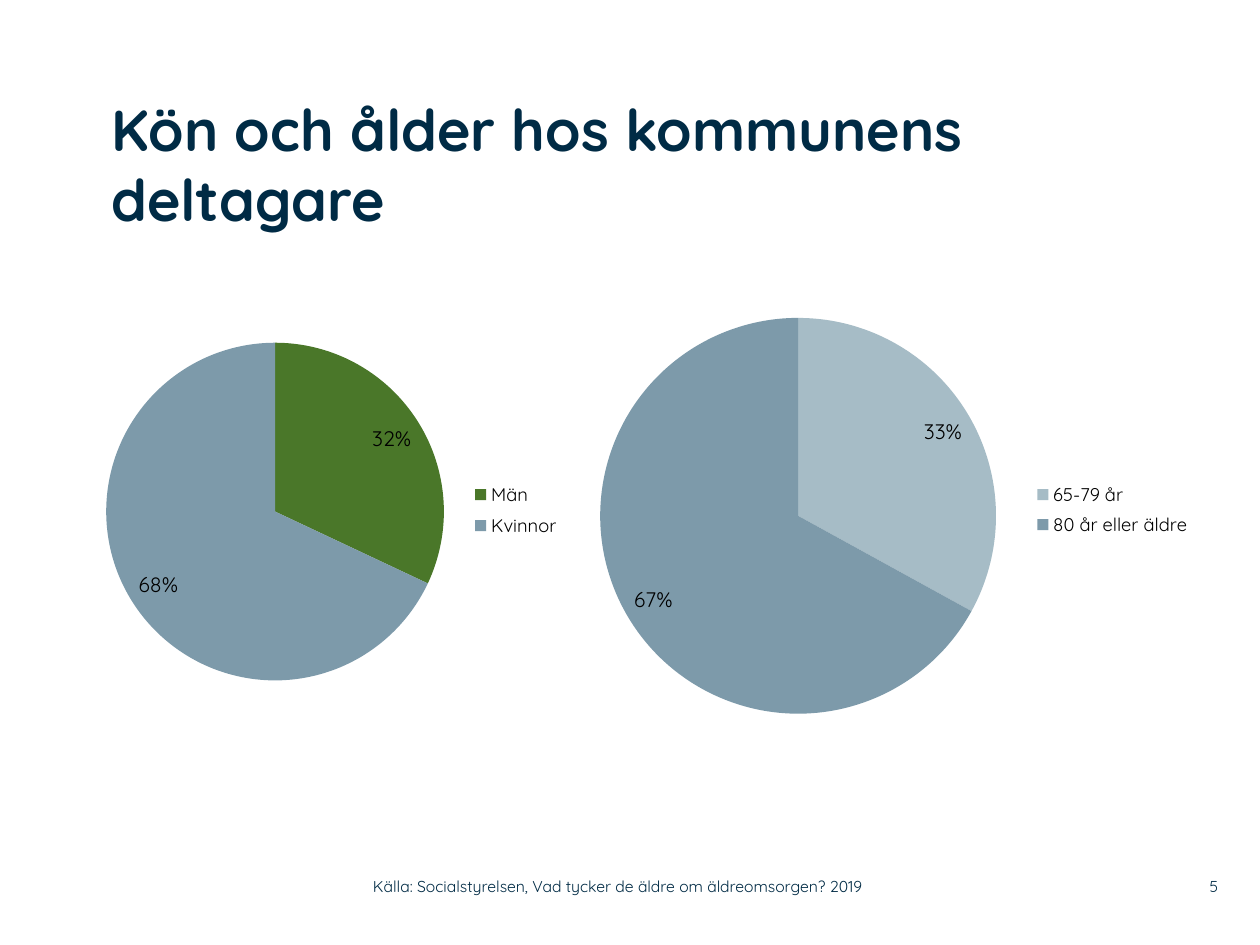
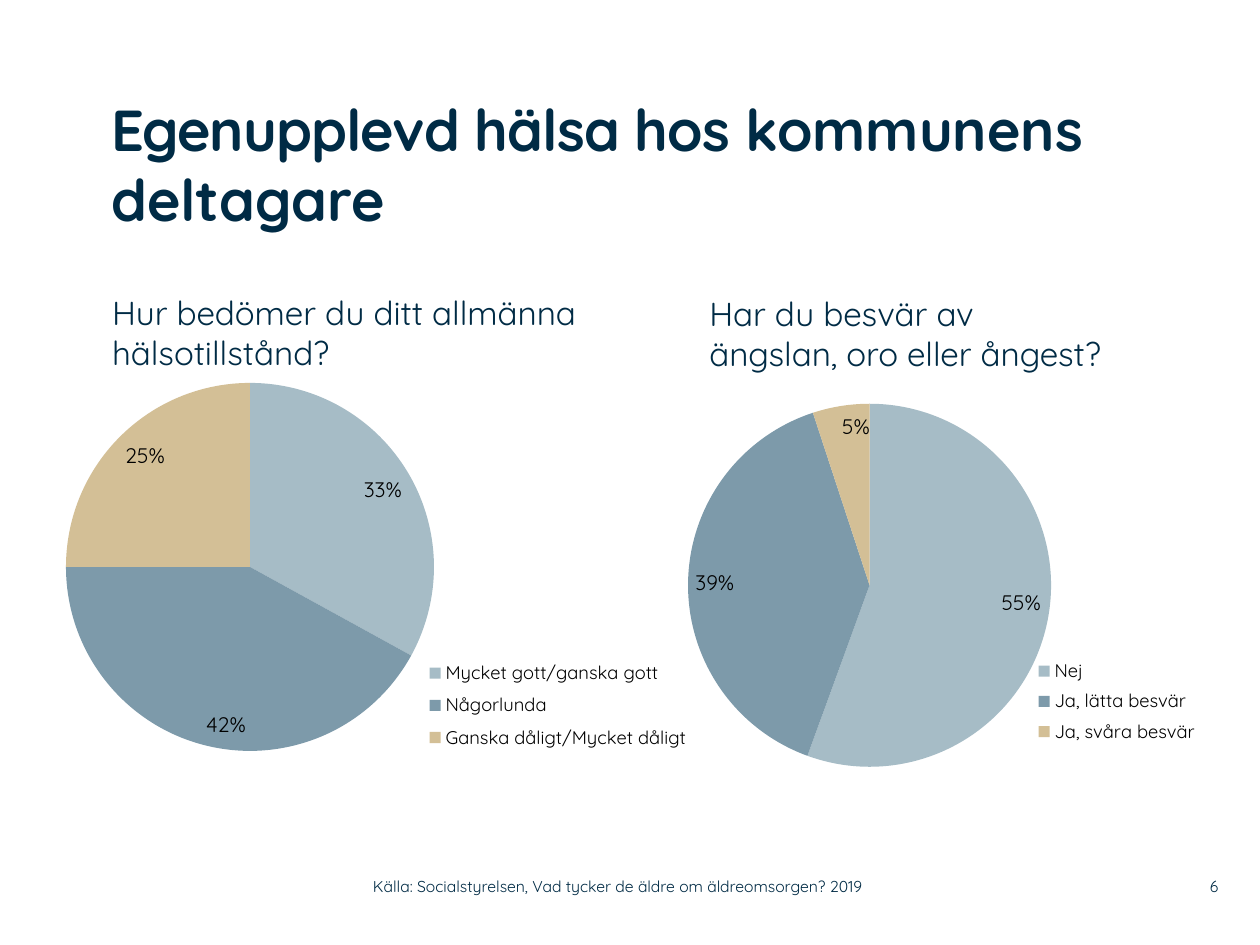
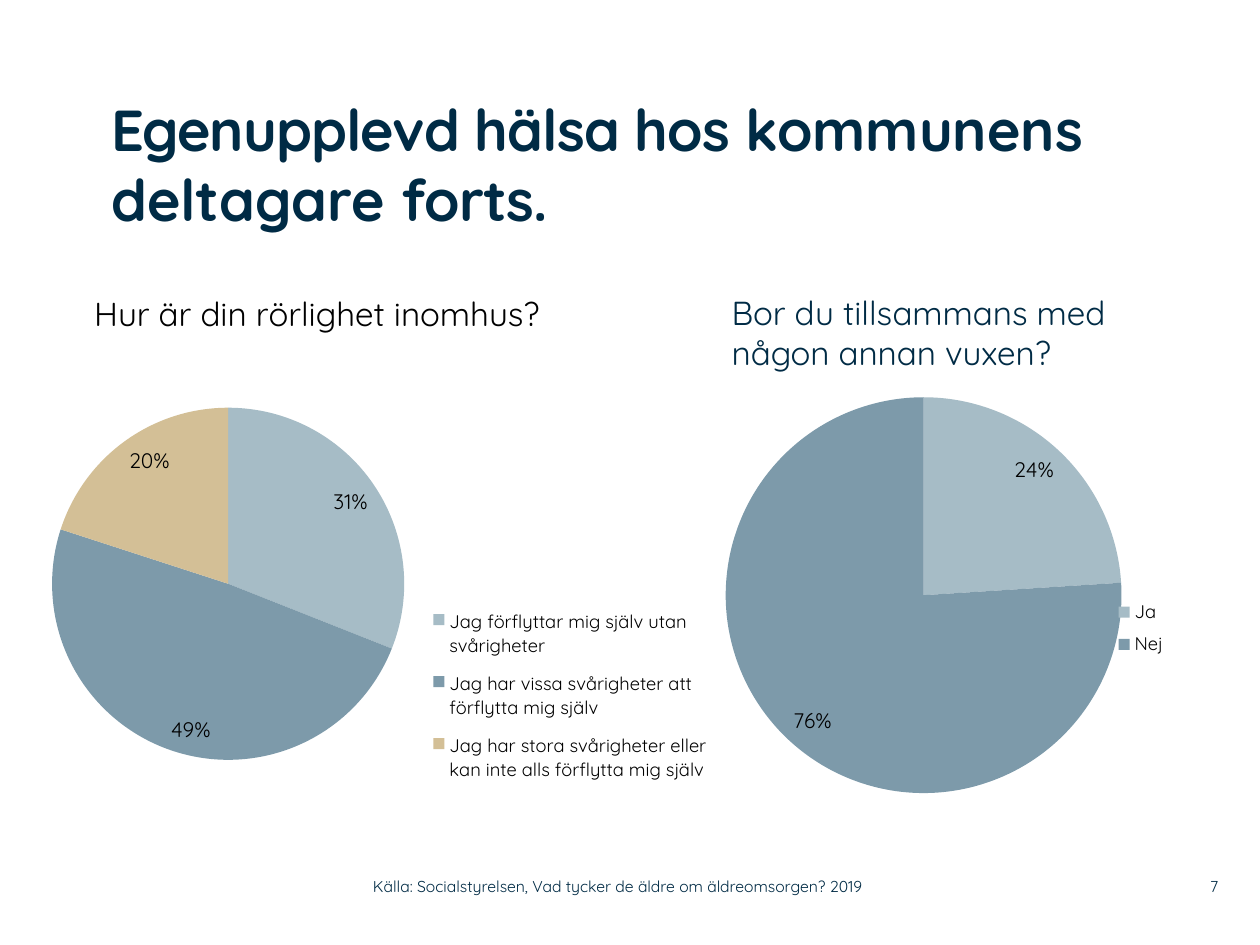
from dataclasses import dataclass

from lxml.etree import SubElement
from pptx import Presentation
from pptx.chart.data import CategoryChartData
from pptx.dml.color import RGBColor
from pptx.enum.chart import XL_CHART_TYPE as ChartType
from pptx.enum.chart import XL_LABEL_POSITION as LabelPosition
from pptx.enum.chart import XL_LEGEND_POSITION as LegendPosition
from pptx.enum.text import MSO_ANCHOR as Anchor
from pptx.enum.text import PP_ALIGN as Align
from pptx.oxml import parse_xml
from pptx.oxml.ns import nsdecls, qn
from pptx.util import Cm, Pt


@dataclass(frozen=True)
class Theme:
    """Colours, font and type sizes shared by the slides."""

    font: str = "Quicksand"
    navy: str = "002B45"
    black: str = "000000"
    green: str = "4A7729"
    pale: str = "A6BCC6"
    steel: str = "7D9AAA"
    sand: str = "D3BF96"
    title: float = 33
    caption: float = 19
    label: float = 12
    legend: float = 10.5
    chart: float = 10
    footer: float = 9


THEME = Theme()
SCALE = (THEME.pale, THEME.steel, THEME.sand)
SOURCE = "Källa: Socialstyrelsen, Vad tycker de äldre om äldreomsorgen? 2019"
SLIDE_SIZE = (25.4, 19.05)
CHART_SIZE = (13.77, 8.69)
TITLE_ORIGIN, TITLE_HEIGHT = (2.24, 1.9), 3.6
SOURCE_BOX = (7.52, 17.5, 11.25, 0.74)
NUMBER_BOX = (23.37, 17.5, 1.19, 0.74)


@dataclass(frozen=True)
class Caption:
    """A question above a pie, with its box in centimetres."""

    text: str
    box: tuple
    color: str = THEME.navy


@dataclass(frozen=True)
class Pie:
    """A pie with its frame, circle and legend, in slide centimetres."""

    origin: tuple
    circle: tuple
    legend: tuple
    shares: dict
    colors: tuple = SCALE


@dataclass(frozen=True)
class Page:
    """The content of one slide."""

    number: int
    title: tuple
    title_width: float
    pies: tuple
    captions: tuple = ()


PAGES = (
    Page(
        5, (("Kön och ålder hos kommunens deltagare", 0),), 19.3,
        pies=(
            Pie((-0.58, 5.87), (2.14, 6.91, 6.81), (9.43, 9.58, 1.94, 1.41),
                {"Män": 32, "Kvinnor": 68}, (THEME.green, THEME.steel)),
            Pie((10.95, 6.07), (12.1, 6.41, 7.98), (20.78, 9.6, 3.29, 1.35),
                {"65-79 år": 33, "80 år eller äldre": 67}),
        ),
    ),
    Page(
        6, (("Egenupplevd hälsa hos ", -50), ("kommunens deltagare", 0)), 21,
        pies=(
            Pie((0.99, 7.09), (1.33, 7.72, 7.42), (8.53, 13.16, 5.44, 2.12),
                {"Mycket gott/ganska gott": 33, "Någorlunda": 42,
                 "Ganska dåligt/Mycket dåligt": 25}),
            Pie((12.45, 7.14), (13.87, 8.14, 7.32), (20.8, 13.16, 3.43, 1.96),
                {"Nej": 55, "Ja, lätta besvär": 39, "Ja, svåra besvär": 5}),
        ),
        captions=(
            Caption("Hur bedömer du ditt allmänna hälsotillstånd?", (2.01, 5.77, 10.34, 1.88)),
            Caption("Har du besvär av \nängslan, oro eller ångest?", (14.05, 5.79, 9.42, 1.88)),
        ),
    ),
    Page(
        7,
        (("Egenupplevd hälsa hos ", -50), ("kommunens deltagare ", 0), ("forts.", -50)),
        20.37,
        pies=(
            Pie((12.42, 7.67), (14.63, 8.01, 7.98), (22.44, 11.93, 1.11, 1.47),
                {"Ja": 24, "Nej": 76}),
            Pie((0.71, 7.44), (1.05, 8.22, 7.1), (8.59, 12.01, 5.81, 4.05),
                {"Jag förflyttar mig själv utan svårigheter": 31,
                 "Jag har vissa svårigheter att förflytta mig själv": 49,
                 "Jag har stora svårigheter eller kan inte alls förflytta mig själv": 20}),
        ),
        captions=(
            Caption("Hur är din rörlighet inomhus?", (1.65, 5.79, 10.34, 1.07), THEME.black),
            Caption("Bor du tillsammans med någon annan vuxen?", (14.5, 5.77, 9.42, 1.88)),
        ),
    ),
)


def set_values(target, values):
    """Set each named attribute of the target."""
    for name, value in values.items():
        setattr(target, name, value)


def style_font(font, size, color, bold=False):
    """Give a font the theme typeface with a size and colour."""
    set_values(font, {"name": THEME.font, "size": Pt(size), "bold": bold})
    font.color.rgb = RGBColor.from_string(color)


def add_text(slide, box, size, color=THEME.navy, bold=False, align=Align.LEFT, **frame_format):
    """Add a wrapping text box and return its paragraph and a run styler."""
    shape = slide.shapes.add_textbox(*map(Cm, box))
    set_values(shape.text_frame, {"word_wrap": True, **frame_format})
    paragraph = shape.text_frame.paragraphs[0]
    paragraph.alignment = align

    def write(text, spacing=0):
        """Append styled lines with the given letter spacing."""
        for index, line in enumerate(text.split("\n")):
            if index:
                paragraph.add_line_break()
            run = paragraph.add_run()
            run.text = line
            style_font(run.font, size, color, bold)
            if spacing:
                run.font._element.set("spc", str(spacing))

    return write


def no_margins():
    """Return frame values for text without insets."""
    return {f"margin_{side}": 0 for side in ("left", "top", "right", "bottom")}


def add_title(slide, parts, box):
    """Write the title runs in the given box."""
    write = add_text(slide, box, THEME.title, bold=True, **no_margins())
    for text, spacing in parts:
        write(text, spacing)


def add_footer(slide, number):
    """Write the source line and the slide number."""
    for text, box, align in (
        (str(number), NUMBER_BOX, Align.RIGHT),
        (SOURCE, SOURCE_BOX, Align.LEFT),
    ):
        write = add_text(slide, box, THEME.footer, align=align,
                         vertical_anchor=Anchor.MIDDLE, **no_margins())
        write(text)


def place_part(part, index, origin, box, inner=False):
    """Fix a chart part at a slide box, as fractions of the chart frame."""
    for old in part.findall(qn("c:layout")):
        part.remove(old)
    layout = parse_xml(f"<c:layout {nsdecls('c')}/>")
    manual = SubElement(layout, qn("c:manualLayout"))
    left, top, width, height = box
    frame_width, frame_height = CHART_SIZE
    values = {"layoutTarget": "inner"} if inner else {}
    values |= {
        "xMode": "edge",
        "yMode": "edge",
        "x": (left - origin[0]) / frame_width,
        "y": (top - origin[1]) / frame_height,
        "w": width / frame_width,
        "h": height / frame_height,
    }
    for name, value in values.items():
        SubElement(manual, qn(f"c:{name}")).set("val", str(value))
    part.insert(index, layout)


def clear_background(chart):
    """Make the chart frame and plot area transparent."""
    root = chart._chartSpace
    blank = f"<c:spPr {nsdecls('c', 'a')}><a:noFill/><a:ln><a:noFill/></a:ln></c:spPr>"
    root.chart.addnext(parse_xml(blank))
    root.chart.plotArea.append(parse_xml(blank))


def add_pie(slide, pie):
    """Add a pie chart with percentage labels and a legend."""
    data = CategoryChartData()
    data.categories = list(pie.shares)
    data.add_series("Series 1", list(pie.shares.values()))
    frame = slide.shapes.add_chart(ChartType.PIE, *map(Cm, pie.origin + CHART_SIZE), data)
    chart = frame.chart
    set_values(chart, {"has_title": False, "has_legend": True})
    style_font(chart.font, THEME.chart, THEME.black)
    set_values(chart.legend, {"position": LegendPosition.RIGHT, "include_in_layout": False})
    style_font(chart.legend.font, THEME.legend, THEME.black)

    plot = chart.plots[0]
    set_values(plot, {"vary_by_categories": True, "has_data_labels": True})
    set_values(plot.data_labels, {
        "show_value": True,
        "show_percentage": False,
        "number_format": '0"%"',
        "number_format_is_linked": False,
        "position": LabelPosition.INSIDE_END,
    })
    style_font(plot.data_labels.font, THEME.label, THEME.black)
    for index, color in enumerate(pie.colors[:len(pie.shares)]):
        slice_format = plot.series[0].points[index].format
        slice_format.fill.solid()
        slice_format.fill.fore_color.rgb = RGBColor.from_string(color)
        slice_format.line.fill.background()

    left, top, diameter = pie.circle
    circle_box = (left, top, diameter, diameter)
    place_part(chart._chartSpace.chart.plotArea, 0, pie.origin, circle_box, inner=True)
    place_part(chart.legend._element, 1, pie.origin, pie.legend)
    clear_background(chart)


def add_page(presentation, page):
    """Build one slide from its page content."""
    slide = presentation.slides.add_slide(presentation.slide_layouts[6])
    add_title(slide, page.title, (*TITLE_ORIGIN, page.title_width, TITLE_HEIGHT))
    for caption in page.captions:
        add_text(slide, caption.box, THEME.caption, caption.color)(caption.text)
    for pie in page.pies:
        add_pie(slide, pie)
    add_footer(slide, page.number)


def main():
    """Build and save the presentation."""
    presentation = Presentation()
    width, height = SLIDE_SIZE
    set_values(presentation, {"slide_width": Cm(width), "slide_height": Cm(height)})
    for page in PAGES:
        add_page(presentation, page)
    presentation.save("out.pptx")


if __name__ == "__main__":
    main()
